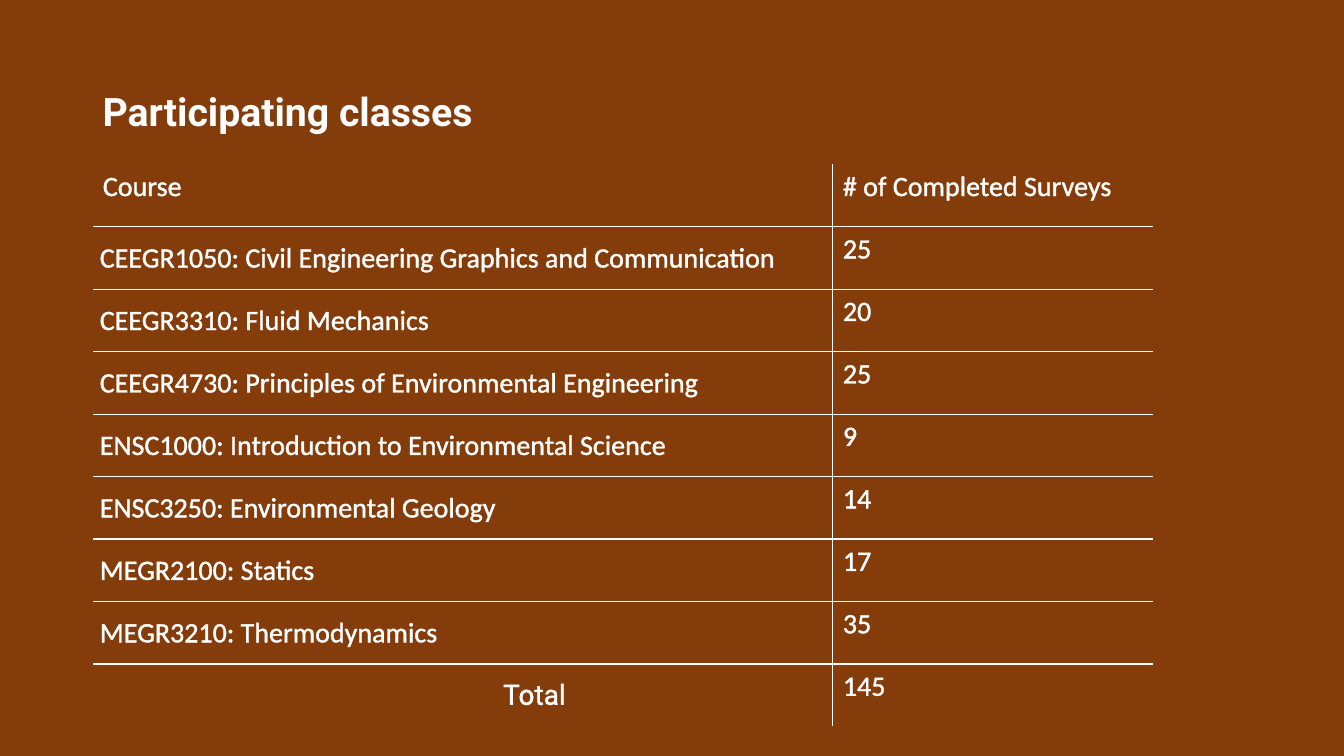
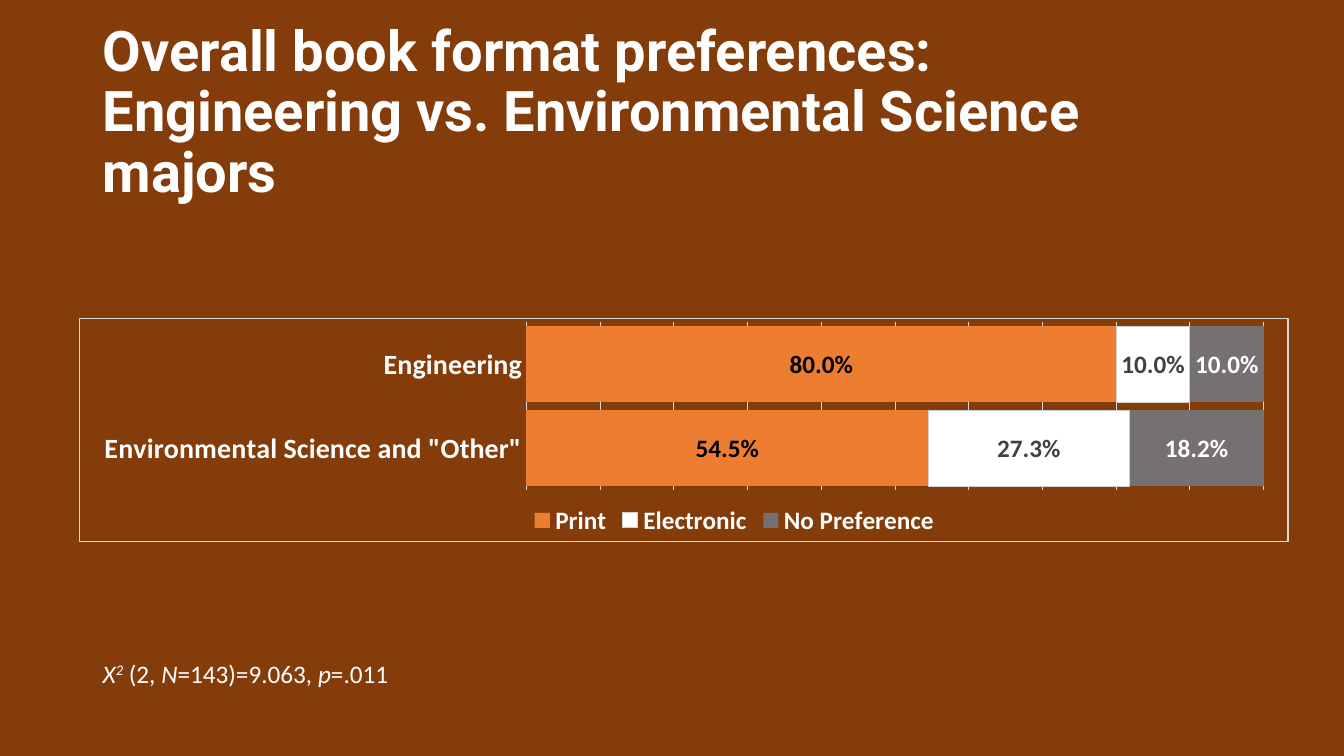
from lxml.etree import SubElement
from pptx import Presentation
from pptx.chart.data import CategoryChartData
from pptx.dml.color import RGBColor
from pptx.enum.chart import XL_CHART_TYPE, XL_LABEL_POSITION, XL_LEGEND_POSITION, XL_TICK_MARK
from pptx.enum.text import MSO_ANCHOR
from pptx.oxml import parse_xml
from pptx.oxml.ns import nsdecls, qn
from pptx.util import Pt

BROWN = RGBColor(0x84, 0x3C, 0x0B)
WHITE = RGBColor(0xFF, 0xFF, 0xFF)
BLACK = RGBColor(0x00, 0x00, 0x00)
ORANGE = RGBColor(0xED, 0x7D, 0x31)
GRAY = RGBColor(0x76, 0x71, 0x71)
DARK_GRAY = RGBColor(0x40, 0x40, 0x40)
LINE_GRAY = RGBColor(0xD9, 0xD9, 0xD9)
EDGE_GRAY = RGBColor(0xD0, 0xCE, 0xCE)
HEAD_FONT = "Roboto"
BODY_FONT = "Calibri"
PX = 9144

COURSES = [
    ("Course", "# of Completed Surveys"),
    ("CEEGR1050: Civil Engineering Graphics and Communication", "25"),
    ("CEEGR3310: Fluid Mechanics", "20"),
    ("CEEGR4730: Principles of Environmental Engineering", "25"),
    ("ENSC1000: Introduction to Environmental Science", "9"),
    ("ENSC3250: Environmental Geology", "14"),
    ("MEGR2100: Statics", "17"),
    ("MEGR3210: Thermodynamics", "35"),
    ("Total", "145"),
]
MAJORS = ["Engineering", 'Environmental Science and "Other"']
FORMATS = [
    ("Print", (0.8, 0.545), ORANGE, BLACK),
    ("Electronic", (0.1, 0.273), WHITE, DARK_GRAY),
    ("No Preference", (0.1, 0.182), GRAY, WHITE),
]
STATISTIC = [("X", True), ("2", True), (" (2, ", False), ("N", True),
             ("=143)=9.063, ", False), ("p", True), ("=.011", False)]


def px(*lengths):
    """Turn pixel lengths into EMU."""
    return [length * PX for length in lengths]


def style(font, size, color=WHITE, bold=False, name=BODY_FONT):
    """Set the size, colour, weight and typeface of a font."""
    font.size = Pt(size)
    font.color.rgb = color
    font.bold = bold
    font.name = name


def stroke(line, color, width=0.75):
    """Give a line a solid colour and a width."""
    line.color.rgb = color
    line.width = Pt(width)


def add_slide(prs, title, size):
    """Add a brown slide with its bold title."""
    s = prs.slides.add_slide(prs.slide_layouts[6])
    s.background.fill.solid()
    s.background.fill.fore_color.rgb = BROWN
    tf = s.shapes.add_textbox(*px(92, 40, 1150, 145)).text_frame
    tf.word_wrap = True
    tf.vertical_anchor = MSO_ANCHOR.MIDDLE
    tf.text = title
    p = tf.paragraphs[0]
    p.line_spacing = 0.9
    for r in p.runs:
        style(r.font, size, bold=True, name=HEAD_FONT)
    return s


def outline(r):
    """Draw a thin white outline around the letters of a run."""
    r._r.get_or_add_rPr().insert(0, parse_xml(
        f'<a:ln {nsdecls("a")} w="9525"><a:solidFill><a:srgbClr val="{WHITE}"/>'
        '</a:solidFill></a:ln>'))


def set_borders(cell, shown):
    """Draw the named sides of a cell in white and clear the others."""
    tcPr = cell._tc.get_or_add_tcPr()
    for i, side in enumerate("LRTB"):
        fill = f'<a:solidFill><a:srgbClr val="{WHITE}"/></a:solidFill>' if side in shown else "<a:noFill/>"
        tcPr.insert(i, parse_xml(f'<a:ln{side} {nsdecls("a")} w="12700">{fill}</a:ln{side}>'))


def fill_cell(cell, text, font_name):
    """Write a cell's text on a clear background."""
    cell.fill.background()
    cell.text_frame.text = text
    r = cell.text_frame.paragraphs[0].runs[0]
    style(r.font, 20, name=font_name)
    outline(r)


def add_course_table(s):
    """Add the table of courses and completed surveys."""
    last = len(COURSES) - 1
    widths = px(734, 318)
    frame = s.shapes.add_table(len(COURSES), 2, *px(92, 163, 1052, 62 * len(COURSES)))
    table = frame.table
    table.first_row = table.horz_banding = False
    for column, width in zip(table.columns, widths):
        column.width = width
    for i, row in enumerate(COURSES):
        for j, text in enumerate(row):
            cell = table.cell(i, j)
            fill_cell(cell, text, HEAD_FONT if text == "Total" else BODY_FONT)
            set_borders(cell, "RL"[j] + ("T" if i else "") + ("B" if i < last else ""))
        if i:
            course = table.cell(i, 0)
            course.vertical_anchor = MSO_ANCHOR.MIDDLE
            course.margin_left, course.margin_right = px(7, 7)
            course.margin_top = course.margin_bottom = 0
    p = table.cell(last, 0).text_frame.paragraphs[0]
    p.level = 8
    pPr = p._p.get_or_add_pPr()
    pPr.set("marL", str(400 * PX))
    pPr.set("indent", "0")


def place(parent, index, inner=False, **fractions):
    """Place a chart part by fractions of the chart area."""
    for old in parent.findall(qn("c:layout")):
        parent.remove(old)
    layout = parse_xml(f'<c:layout {nsdecls("c")}><c:manualLayout/></c:layout>')
    parent.insert(index, layout)
    settings = {"layoutTarget": "inner"} if inner else {}
    settings.update(xMode="edge", yMode="edge", **fractions)
    for tag, value in settings.items():
        SubElement(layout[0], qn(f"c:{tag}")).set("val", str(value))


def frame_chart(chart):
    """Draw a thin border around a clear chart area."""
    chart._chartSpace.find(qn("c:chart")).addnext(parse_xml(
        f'<c:spPr {nsdecls("c", "a")}><a:noFill/><a:ln w="9525"><a:solidFill>'
        f'<a:srgbClr val="{LINE_GRAY}"/></a:solidFill></a:ln></c:spPr>'))


def style_axes(chart):
    """Set the category labels and the vertical gridlines."""
    majors = chart.category_axis
    majors.reverse_order = True
    majors.major_tick_mark = XL_TICK_MARK.NONE
    style(majors.tick_labels.font, 20, bold=True)
    stroke(majors.format.line, LINE_GRAY)
    shares = chart.value_axis
    shares.minimum_scale, shares.maximum_scale, shares.major_unit = 0, 1, 0.1
    shares.tick_labels.number_format = "0.00%"
    shares.tick_labels.number_format_is_linked = False
    shares.has_major_gridlines = True
    stroke(shares.major_gridlines.format.line, LINE_GRAY)
    shares.visible = False


def style_series(series, color, label_color):
    """Colour a series and its centred labels."""
    series.format.fill.solid()
    series.format.fill.fore_color.rgb = color
    if color == WHITE:
        stroke(series.format.line, EDGE_GRAY)
    labels = series.data_labels
    labels.show_value = True
    labels.number_format = "0.0%"
    labels.number_format_is_linked = False
    labels.position = XL_LABEL_POSITION.CENTER
    style(labels.font, 18, label_color, True)


def add_preference_chart(s):
    """Add the stacked bars of format preferences by major."""
    data = CategoryChartData(number_format="0.0%")
    data.categories = MAJORS
    for name, values, _, _ in FORMATS:
        data.add_series(name, values)
    chart = s.shapes.add_chart(
        XL_CHART_TYPE.BAR_STACKED_100, *px(78, 315, 1200, 223), data).chart
    chart.has_title = False
    style(chart.font, 10, BLACK)
    frame_chart(chart)
    style_axes(chart)
    plot = chart.plots[0]
    plot.gap_width, plot.overlap = 10, 100
    plot.vary_by_categories = False
    for series, (_, _, color, label_color) in zip(plot.series, FORMATS):
        style_series(series, color, label_color)
    chart.has_legend = True
    legend = chart.legend
    legend.position = XL_LEGEND_POSITION.BOTTOM
    legend.include_in_layout = False
    style(legend.font, 18, bold=True)
    place(chart._chartSpace.chart.plotArea, 0, inner=True, x=0.37, y=0.02, w=0.61, h=0.75)
    place(legend._element, 1, x=0.37, y=0.83)


def add_statistic(s):
    """Add the line with the chi-square result."""
    tf = s.shapes.add_textbox(*px(92, 648, 617, 40)).text_frame
    tf.word_wrap = True
    p = tf.paragraphs[0]
    for text, italic in STATISTIC:
        r = p.add_run()
        r.text = text
        style(r.font, 18)
        r.font.italic = italic
    p.runs[1]._r.get_or_add_rPr().set("baseline", "30000")


def main():
    """Build and save the two slides."""
    prs = Presentation()
    prs.slide_width, prs.slide_height = px(1333, 750)
    add_course_table(add_slide(prs, "Participating classes", 28))
    s = add_slide(prs, "Overall book format preferences:\vEngineering vs. Environmental Science majors", 40)
    add_statistic(s)
    add_preference_chart(s)
    prs.save("out.pptx")


if __name__ == "__main__":
    main()
